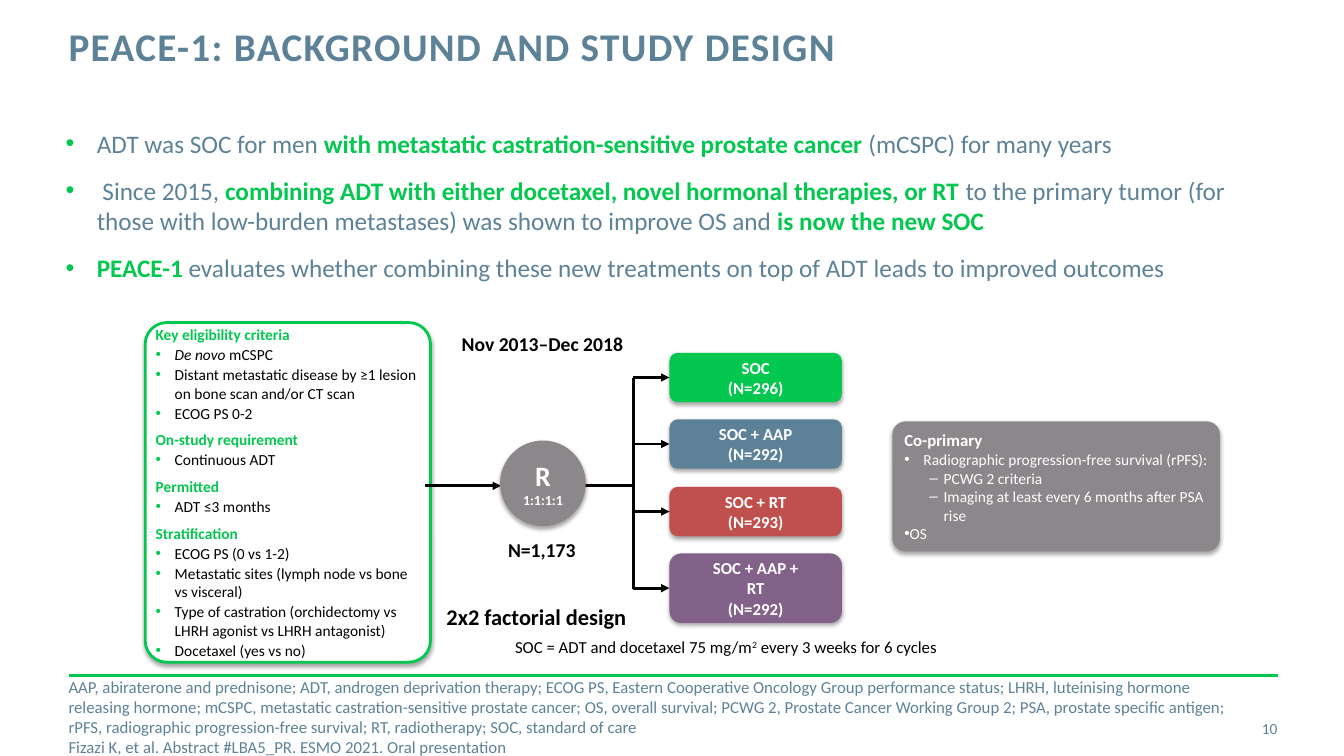
import pptx
import pptx.util
import pptx.dml.color
import pptx.enum.shapes
import pptx.enum.text
import pptx.oxml
import pptx.oxml.ns
from lxml import etree

Inches = pptx.util.Inches
Pt = pptx.util.Pt
RGBColor = pptx.dml.color.RGBColor
Shape = pptx.enum.shapes.MSO_SHAPE
Align = pptx.enum.text.PP_ALIGN
Anchor = pptx.enum.text.MSO_ANCHOR
qn = pptx.oxml.ns.qn

GREEN = RGBColor(0x03, 0xC7, 0x4F)
SLATE = RGBColor(0x5D, 0x82, 0x98)
RED = RGBColor(0xC0, 0x50, 0x4D)
PURPLE = RGBColor(0x82, 0x62, 0x88)
GREY = RGBColor(0x8B, 0x87, 0x8B)
BLACK = RGBColor(0, 0, 0)
WHITE = RGBColor(0xFF, 0xFF, 0xFF)

SHADOW = (
    f'<a:outerShdw {pptx.oxml.ns.nsdecls("a")} blurRad="39370" dist="22860" dir="5400000" rotWithShape="0">'
    '<a:srgbClr val="000000"><a:alpha val="35000"/></a:srgbClr></a:outerShdw>'
)


class SlideBuilder:
    font = "Calibri"
    line_width = Pt(2)

    def __init__(self, page):
        self.page = page

    def frame(self, shape, insets, anchor):
        frame = shape.text_frame
        frame.word_wrap = True
        frame.vertical_anchor = anchor
        frame.margin_left, frame.margin_top, frame.margin_right, frame.margin_bottom = map(Inches, insets)
        return frame

    def text_box(self, left, top, width, height, anchor=Anchor.TOP):
        box = self.page.shapes.add_textbox(Inches(left), Inches(top), Inches(width), Inches(height))
        return self.frame(box, (0, 0, 0, 0), anchor)

    def label(self, left, top, width, height, spans, size, bold=True):
        box = self.page.shapes.add_textbox(Inches(left), Inches(top), Inches(width), Inches(height))
        box.text_frame.word_wrap = False
        box.text_frame.auto_size = pptx.enum.text.MSO_AUTO_SIZE.SHAPE_TO_FIT_TEXT
        self.paragraph(box.text_frame, spans, size, BLACK, bold)

    def panel(self, kind, left, top, width, height, fill, outline=None, corner=None, inset=0):
        shape = self.page.shapes.add_shape(kind, Inches(left), Inches(top), Inches(width), Inches(height))
        if corner is not None:
            shape.adjustments[0] = corner
        shape.fill.solid()
        shape.fill.fore_color.rgb = fill
        if outline is None:
            shape.line.fill.background()
        else:
            shape.line.color.rgb = outline
            shape.line.width = self.line_width
        shape.shadow.inherit = False
        effects = shape.element.spPr.find(qn("a:effectLst"))
        effects.append(pptx.oxml.parse_xml(SHADOW))
        return shape, self.frame(shape, (inset, 0, 0, 0), Anchor.MIDDLE)

    def bullet(self, para, mark, color, margin, hang):
        properties = para._p.get_or_add_pPr()
        properties.set("marL", str(Inches(margin)))
        properties.set("indent", str(-Inches(hang)))
        tint = etree.SubElement(properties, qn("a:buClr"))
        etree.SubElement(tint, qn("a:srgbClr"), val=str(color))
        etree.SubElement(properties, qn("a:buFont"), typeface="Arial")
        etree.SubElement(properties, qn("a:buChar"), char=mark)

    def paragraph(self, frame, spans, size, color, bold=False, align=Align.LEFT, before=0, bullet=None):
        para = frame.paragraphs[0]
        if para.runs:
            para = frame.add_paragraph()
            para.space_before = Pt(before)
        para.alignment = align
        if bullet:
            self.bullet(para, *bullet)
        para.font.name = self.font
        para.font.size = Pt(size)
        para.font.color.rgb = color
        para.font.bold = bold
        for text, style in [(spans, {})] if isinstance(spans, str) else spans:
            for index, piece in enumerate(text.split("\n")):
                if index:
                    para.add_line_break()
                self.span(para, piece, **style)
        return para

    def span(self, para, text, size=None, color=None, bold=None, italic=None, raised=False):
        span = para.add_run()
        span.text = text
        if size:
            span.font.size = Pt(size)
        if color is not None:
            span.font.color.rgb = color
        if bold is not None:
            span.font.bold = bold
        if italic is not None:
            span.font.italic = italic
        if raised:
            span.font._element.set("baseline", "30000")

    def line(self, start, end, color=BLACK, arrow=False, target=None):
        points = [Inches(value) for value in (*start, *end)]
        connector = self.page.shapes.add_connector(pptx.enum.shapes.MSO_CONNECTOR.STRAIGHT, *points)
        connector.line.color.rgb = color
        connector.line.width = self.line_width
        if arrow:
            etree.SubElement(connector.line._get_or_add_ln(), qn("a:tailEnd"), type="triangle")
        etree.SubElement(connector.element.spPr, qn("a:effectLst"))
        if target is not None:
            connector.end_connect(target, 1)


def main():
    deck = pptx.Presentation()
    deck.slide_width, deck.slide_height = Inches(13.33), Inches(7.5)
    slide = SlideBuilder(deck.slides.add_slide(deck.slide_layouts[6]))
    key = {"color": GREEN, "bold": True}

    slide.line((0.68, 6.7), (12.68, 6.7), GREEN)

    title = slide.paragraph(slide.text_box(0.68, 0.27, 9.56, 0.88),
                            "PEACE-1: BACKGROUND AND STUDY DESIGN", 28, SLATE, True)
    title.line_spacing = Pt(30)
    title.runs[0].font._element.set("spc", "100")

    background = slide.text_box(0.65, 1.27, 11.99, 1.7)
    for spans in (
        [("ADT was SOC for men ", {}),
         ("with metastatic castration-sensitive prostate cancer", key),
         (" (mCSPC) for many years", {})],
        [(" Since 2015, ", {}),
         ("combining ADT with either docetaxel, novel hormonal therapies, or RT ", key),
         ("to the primary tumor (for those with low-burden metastases) was shown to improve OS and ", {}),
         ("is now the new SOC", key)],
        [("PEACE-1 ", key),
         ("evaluates whether combining these new treatments on top of ADT leads to improved outcomes", {})],
    ):
        slide.paragraph(background, spans, 18, SLATE, before=12, bullet=("•", GREEN, 0.31, 0.31))

    _, eligibility = slide.panel(Shape.ROUNDED_RECTANGLE, 1.44, 3.2, 2.83, 3.37, WHITE, GREEN, 0.076, 0.04)
    criteria = {
        "Key eligibility criteria": [
            [("De novo ", {"italic": True}), ("mCSPC", {})],
            "Distant metastatic disease by ≥1 lesion on bone scan and/or CT scan",
            "ECOG PS 0-2"],
        "On-study requirement": ["Continuous ADT"],
        "Permitted": ["ADT ≤3 months"],
        "Stratification": [
            "ECOG PS (0 vs 1-2)",
            "Metastatic sites (lymph node vs bone vs visceral)",
            "Type of castration (orchidectomy vs LHRH agonist vs LHRH antagonist)",
            "Docetaxel (yes vs no)"],
    }
    for heading, items in criteria.items():
        slide.paragraph(eligibility, heading, 11, GREEN, True, before=6)
        for item in items:
            slide.paragraph(eligibility, item, 11, BLACK, before=1, bullet=("•", GREEN, 0.19, 0.19))

    flow, trunk, arm_left = 4.82, 6.28, 6.64
    slide.line((4.22, flow), (4.97, flow), arrow=True)
    slide.line((5.73, flow), (trunk, flow))
    slide.line((trunk, 3.75), (trunk, 5.84))
    for name, top, height, fill in (
        ("SOC\n(N=296)", 3.5, 0.49, GREEN),
        ("SOC + AAP\n(N=292)", 4.16, 0.49, SLATE),
        ("SOC + RT\n(N=293)", 4.83, 0.49, RED),
        ("SOC + AAP +\nRT\n(N=292)", 5.49, 0.69, PURPLE),
    ):
        arm, frame = slide.panel(Shape.ROUNDED_RECTANGLE, arm_left, top, 1.71, height, fill)
        slide.paragraph(frame, name, 12, WHITE, True, Align.CENTER)
        middle = top + height / 2
        slide.line((trunk, middle), (arm_left, middle), arrow=True, target=arm)

    _, randomisation = slide.panel(Shape.OVAL, 4.96, 4.37, 0.85, 0.85, GREY)
    slide.paragraph(randomisation, [("R\n", {"size": 20}), ("1:1:1:1", {"size": 10})],
                    20, WHITE, True, Align.CENTER)

    _, endpoints = slide.panel(Shape.ROUNDED_RECTANGLE, 8.85, 4.18, 3.25, 1.29, GREY, corner=0.103, inset=0.08)
    slide.paragraph(endpoints, "Co-primary", 12, WHITE, True)
    for text, mark, margin, hang in (
        ("Radiographic progression-free survival (rPFS):", "•", 0.19, 0.19),
        ("PCWG 2 criteria", "–", 0.39, 0.14),
        ("Imaging at least every 6 months after PSA rise", "–", 0.39, 0.14),
        ("OS", "•", 0, 0.26),
    ):
        para = slide.paragraph(endpoints, text, 11, WHITE, bullet=(mark, WHITE, margin, hang))
        para.level = int(mark == "–")

    slide.label(4.48, 3.24, 1.82, 0.34, "Nov 2013–Dec 2018", 14)
    slide.label(4.94, 5.29, 0.88, 0.34, "N=1,173", 14)
    slide.label(4.33, 5.93, 2.06, 0.37, "2x2 factorial design", 16)
    slide.label(5.01, 6.27, 4.45, 0.3, [("SOC = ADT and docetaxel 75 mg/m", {}), ("2", {"raised": True}),
                                        (" every 3 weeks for 6 cycles", {})], 12, False)

    footnote = slide.text_box(0.68, 6.91, 11.66, 0.4, Anchor.MIDDLE)
    for text in (
        "AAP, abiraterone and prednisone; ADT, androgen deprivation therapy; ECOG PS, Eastern Cooperative "
        "Oncology Group performance status; LHRH, luteinising hormone releasing hormone; mCSPC, metastatic "
        "castration-sensitive prostate cancer; OS, overall survival; PCWG 2, Prostate Cancer Working Group 2; "
        "PSA, prostate specific antigen; rPFS, radiographic progression-free survival; RT, radiotherapy; "
        "SOC, standard of care",
        "Fizazi K, et al. Abstract #LBA5_PR. ESMO 2021. Oral presentation",
    ):
        slide.paragraph(footnote, text, 12, SLATE)
    slide.paragraph(slide.text_box(11.81, 7.03, 0.86, 0.4, Anchor.MIDDLE), "10", 11, SLATE, align=Align.RIGHT)

    deck.save("out.pptx")


if __name__ == "__main__":
    main()
